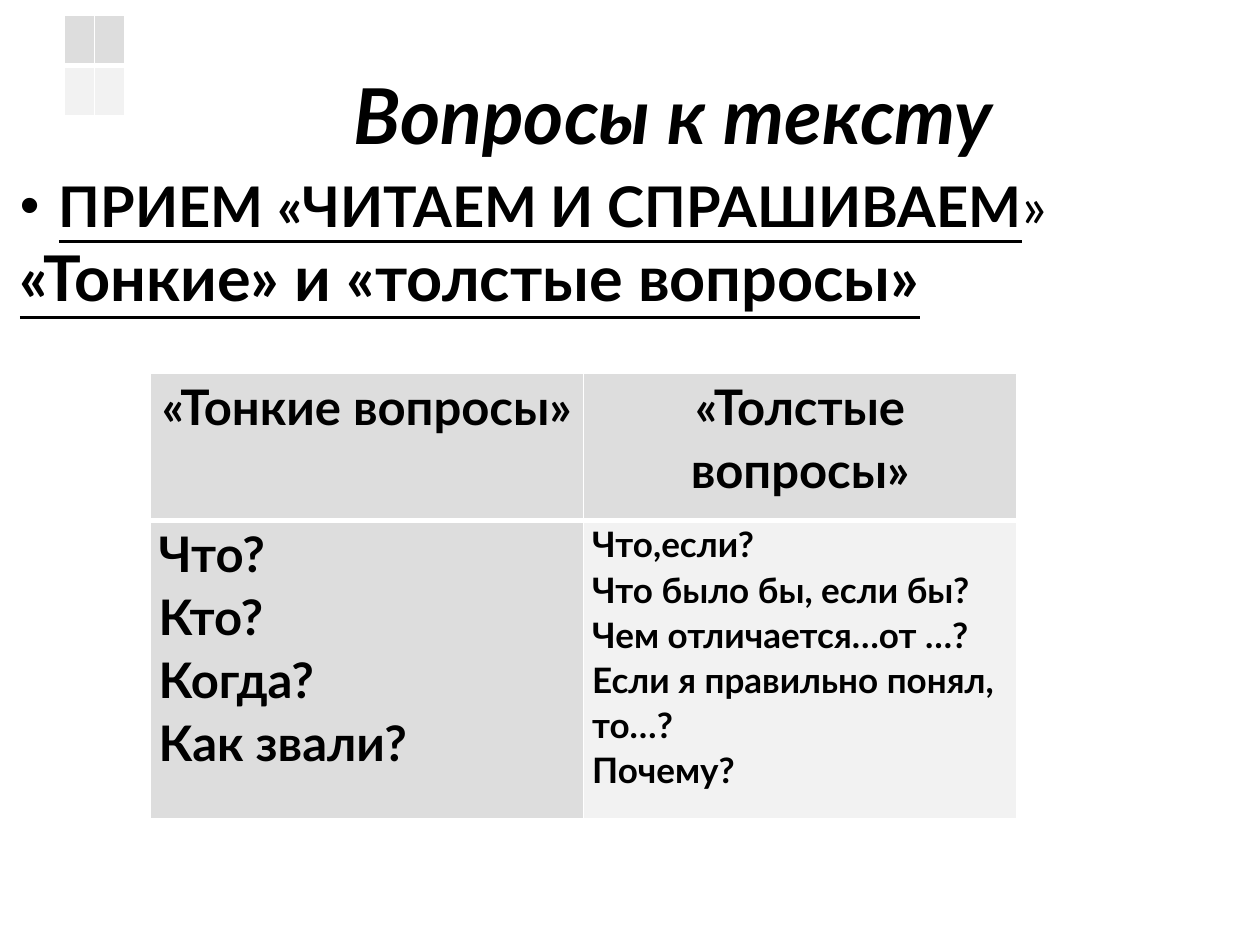
import pptx
import pptx.dml.color
import pptx.enum.text
import pptx.oxml.ns
import pptx.util
from lxml import etree

Inches = pptx.util.Inches
Pt = pptx.util.Pt
ALIGN = pptx.enum.text.PP_ALIGN
ANCHOR = pptx.enum.text.MSO_ANCHOR
FONT = "Lato"
DARK, LIGHT, WHITE = "DDDDDD", "F2F2F2", "FFFFFF"


def color(hex_code):
    return pptx.dml.color.RGBColor.from_string(hex_code)


def add_element(parent, tag, **attributes):
    return etree.SubElement(parent, pptx.oxml.ns.qn(tag), attributes)


def write(paragraph, text, size=32, bold=True, italic=False, underline=False,
          align=ALIGN.LEFT, line_spacing=None):
    paragraph.alignment = align
    if line_spacing:
        paragraph.line_spacing = line_spacing
    run = paragraph.add_run()
    run.text = text
    font = run.font
    font.name, font.size = FONT, Pt(size)
    font.bold, font.italic, font.underline = bold, italic, underline
    font.color.rgb = color("000000")


def add_text_frame(slide, left, top, width, height, anchor):
    frame = slide.shapes.add_textbox(
        Inches(left), Inches(top), Inches(width), Inches(height)).text_frame
    frame.word_wrap = True
    frame.vertical_anchor = anchor
    return frame


def add_title(slide, *box):
    frame = add_text_frame(slide, *box, ANCHOR.MIDDLE)
    write(frame.paragraphs[0], "Вопросы к тексту", size=44, italic=True,
          align=ALIGN.CENTER)


def add_technique(slide, *box):
    frame = add_text_frame(slide, *box, ANCHOR.TOP)
    technique = frame.paragraphs[0]
    properties = technique._p.get_or_add_pPr()
    properties.set("marL", str(Inches(0.31)))
    properties.set("indent", str(-Inches(0.31)))
    add_element(properties, "a:buFont", typeface="Arial")
    add_element(properties, "a:buChar", char="•")
    write(technique, "ПРИЕМ «ЧИТАЕМ И СПРАШИВАЕМ", underline=True)
    write(technique, "»", bold=False)
    write(frame.add_paragraph(), "«Тонкие» и «толстые вопросы»", size=36,
          underline=True)


def style_cell(cell, fill, bottom_width, top_width):
    properties = cell._tc.get_or_add_tcPr()
    edges = {"a:lnL": 1, "a:lnR": 1, "a:lnT": top_width, "a:lnB": bottom_width}
    for tag, width in edges.items():
        edge = add_element(properties, tag, w=str(Pt(width)))
        add_element(add_element(edge, "a:solidFill"), "a:srgbClr", val=WHITE)
    cell.fill.solid()
    cell.fill.fore_color.rgb = color(fill)


def add_grid(slide, left, top, width, row_heights, fills):
    """Two-column table with white rules, thicker below the header row."""
    table = slide.shapes.add_table(
        2, 2, Inches(left), Inches(top), Inches(width),
        Inches(sum(row_heights))).table
    table.first_row = table.horz_banding = False
    for r, height in enumerate(row_heights):
        table.rows[r].height = Inches(height)
        for c in range(2):
            style_cell(table.cell(r, c), fills[r][c],
                       bottom_width=1 if r else 3, top_width=3 if r else 1)
    return table


def add_questions(slide, left, top, width, row_heights):
    table = add_grid(slide, left, top, width, row_heights,
                     [[DARK, DARK], [DARK, LIGHT]])
    columns = [
        ("«Тонкие вопросы»", 28, ["Что?", "Кто?", "Когда?", "Как звали?"]),
        ("«Толстые вопросы»", 20,
         ["Что,если?", "Что было бы, если бы?", "Чем отличается…от …?",
          "Если я правильно понял, то…?", "Почему?"]),
    ]
    for c, (heading, size, questions) in enumerate(columns):
        contents = [([heading], 28, ALIGN.CENTER), (questions, size, ALIGN.LEFT)]
        for r, (lines, line_size, align) in enumerate(contents):
            cell = table.cell(r, c)
            cell.margin_left = cell.margin_right = Inches(0.07)
            cell.margin_top = cell.margin_bottom = 0
            frame = cell.text_frame
            for i, line in enumerate(lines):
                paragraph = frame.add_paragraph() if i else frame.paragraphs[0]
                write(paragraph, line, size=line_size, align=align,
                      line_spacing=1.07)


def main():
    deck = pptx.Presentation()
    deck.slide_width, deck.slide_height = Inches(10), Inches(7.5)
    slide = deck.slides.add_slide(deck.slide_layouts[6])
    add_title(slide, 1.19, 0.25, 8.31, 1.3)
    add_technique(slide, 0.06, 1.31, 9.44, 3.06)
    # Small empty table in the corner
    add_grid(slide, 0.51, 0.12, 0.46, [0.4, 0.4], [[DARK] * 2, [LIGHT] * 2])
    add_questions(slide, 1.19, 2.96, 6.88, [1.17, 2.37])
    deck.save("out.pptx")


if __name__ == "__main__":
    main()
